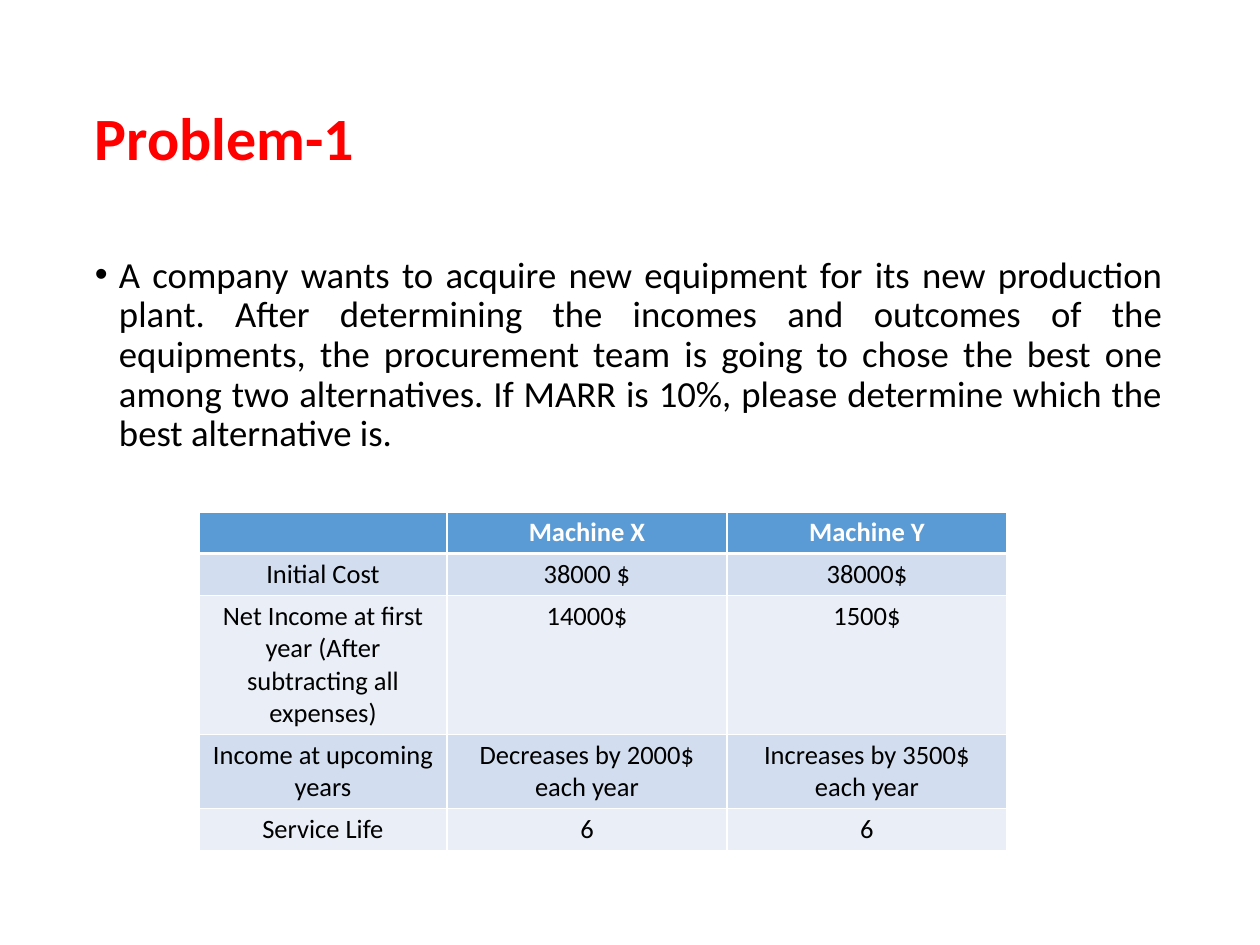
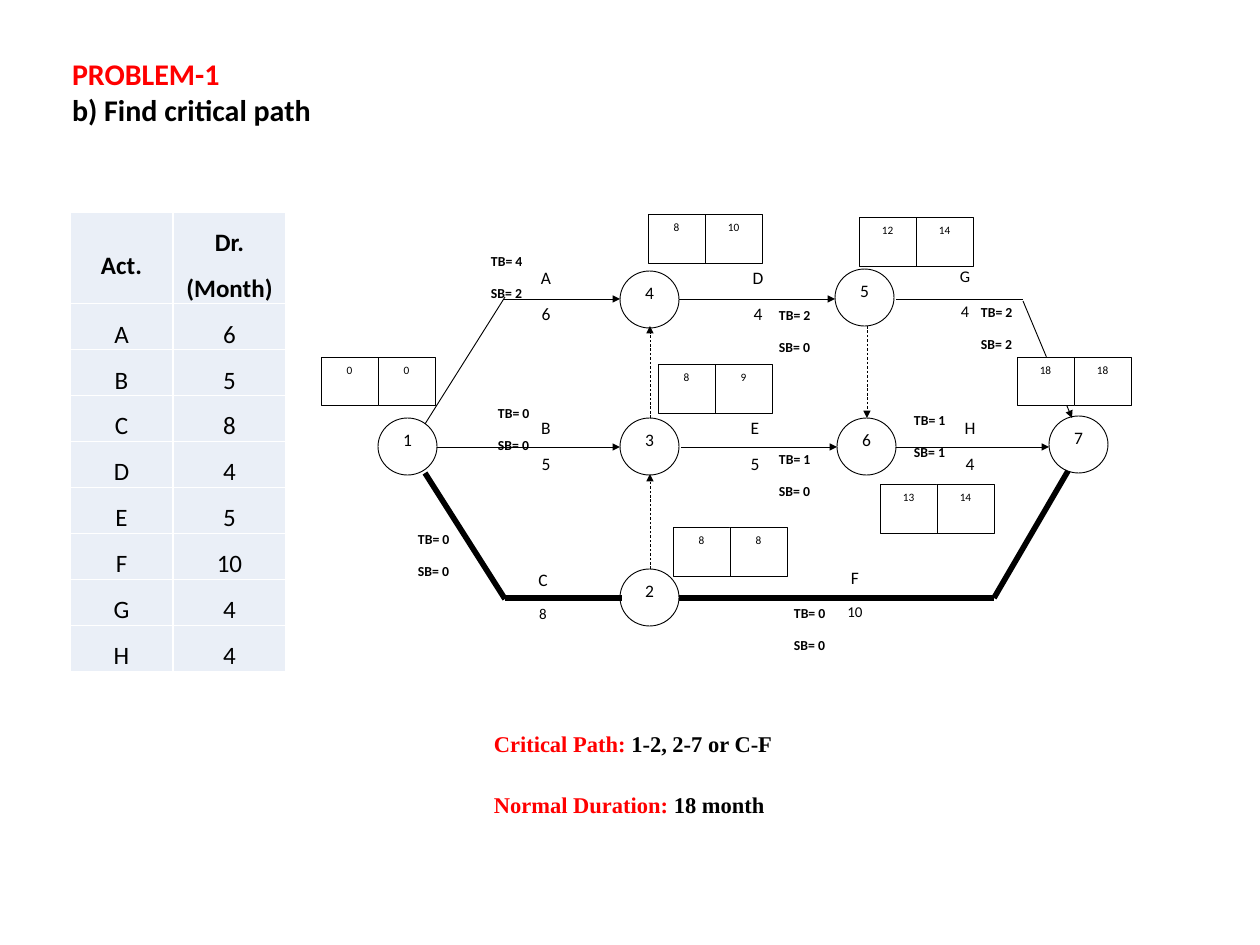
from dataclasses import dataclass

from lxml import etree
from pptx import Presentation
from pptx.dml.color import RGBColor
from pptx.enum.dml import MSO_LINE
from pptx.enum.shapes import MSO_CONNECTOR, MSO_SHAPE
from pptx.enum.text import MSO_ANCHOR, MSO_AUTO_SIZE, PP_ALIGN
from pptx.oxml.ns import qn
from pptx.util import Pt

LEFT, CENTER, JUSTIFY = PP_ALIGN.LEFT, PP_ALIGN.CENTER, PP_ALIGN.JUSTIFY
TOP, MIDDLE = MSO_ANCHOR.TOP, MSO_ANCHOR.MIDDLE
NO_AUTOFIT = MSO_AUTO_SIZE.NONE
RECT, OVAL = MSO_SHAPE.RECTANGLE, MSO_SHAPE.OVAL
STRAIGHT, DASH = MSO_CONNECTOR.STRAIGHT, MSO_LINE.DASH
EMU_PER_PX = 10160


@dataclass(frozen=True)
class Theme:
    font: str = "Calibri"
    serif: str = "Times New Roman"
    red: RGBColor = RGBColor(0xFF, 0, 0)
    black: RGBColor = RGBColor(0, 0, 0)
    white: RGBColor = RGBColor(0xFF, 0xFF, 0xFF)
    header: RGBColor = RGBColor(0x5B, 0x9B, 0xD5)
    band_dark: RGBColor = RGBColor(0xD2, 0xDE, 0xEF)
    band_light: RGBColor = RGBColor(0xEA, 0xEF, 0xF7)
    title: float = 48
    subtitle: float = 24
    body: float = 29.4
    cost_cell: float = 21.2
    activity_cell: float = 20
    result: float = 18
    node: float = 14
    duration_small: float = 12
    slack: float = 11
    event_time: float = 9


T = Theme()

COSTS = [
    ["", "Machine X", "Machine Y"],
    ["Initial Cost", "38000 $", "38000$"],
    ["Net Income at first year (After subtracting all expenses)", "14000$", "1500$"],
    ["Income at upcoming years", "Decreases by 2000$ each year",
     "Increases by 3500$ each year"],
    ["Service Life", "6", "6"],
]
ACTIVITIES = [["Act.", "Dr. (Month)"], ["A", "6"], ["B", "5"], ["C", "8"], ["D", "4"],
              ["E", "5"], ["F", "10"], ["G", "4"], ["H", "4"]]

# Network parts, in px from the network's top left corner
NODES = {"1": (57, 204), "2": (299, 355), "3": (299, 204), "4": (299, 57),
         "5": (514, 55), "6": (516, 204), "7": (728, 202)}
PLAIN_LINES = [(104, 210, 184, 83), (575, 85, 702, 85)]
ARROWS = [(182, 85, 299, 85), (116, 233, 299, 233), (358, 85, 514, 85),
          (360, 233, 516, 233), (575, 233, 728, 233), (702, 87, 751, 204)]
DUMMIES = [(329, 355, 329, 260), (329, 204, 329, 112), (546, 112, 546, 204)]
CRITICAL_LINES = [(104, 259, 184, 385), (184, 384, 301, 384),
                  (358, 384, 673, 384), (673, 384, 747, 257)]
ACTIVITY_LABELS = [  # name, duration, x, y, name size, duration size
    ("A", "6", 182, 45, T.node, T.node),
    ("B", "5", 182, 195, T.node, T.node),
    ("C", "8", 179, 347, T.node, T.duration_small),
    ("D", "4", 394, 45, T.node, T.node),
    ("E", "5", 391, 195, T.node, T.node),
    ("F", "10", 491, 345, T.node, T.duration_small),
    ("G", "4", 601, 45, 13, 13),
    ("H", "4", 606, 195, T.node, T.node),
]
EVENT_TIMES = [("0", "0", 0, 143), ("8", "8", 352, 313), ("13", "14", 559, 270),
               ("8", "9", 337, 150), ("8", "10", 327, 0), ("12", "14", 538, 3),
               ("18", "18", 696, 143)]
SLACKS = [  # total, free, x, y
    (0, 0, 70, 312), (0, 0, 446, 386), (4, 2, 143, 34), (0, 0, 150, 186),
    (2, 0, 431, 88), (2, 2, 633, 85), (1, 0, 431, 232), (1, 1, 566, 193),
]


def px(n):
    return n * EMU_PER_PX


def emu(*lengths):
    return [px(n) for n in lengths]


def format_paragraph(p, size, color=T.black, bold=False, align=LEFT, spacing=1.0,
                     before=0, after=0, font=T.font):
    p.alignment, p.line_spacing = align, spacing
    p.space_before, p.space_after = Pt(before), Pt(after)
    for r in p.runs:
        r.font.name, r.font.size, r.font.bold = font, Pt(size), bold
        r.font.color.rgb = color


def place(sp, box, anchor):
    sp.left, sp.top, sp.width, sp.height = emu(*box)
    tf = sp.text_frame
    tf.word_wrap, tf.auto_size, tf.vertical_anchor = True, NO_AUTOFIT, anchor
    return tf


def add_text(s, box, text, anchor=TOP):
    tf = place(s.shapes.add_textbox(*emu(*box)), box, anchor)
    tf.text = text
    return tf


def add_title(s, box, text, size, anchor, spacing=1.0):
    """Bold title: first line red, any further line black."""
    tf = place(s.shapes.title, box, anchor)
    tf.text = text
    for i, p in enumerate(tf.paragraphs):
        format_paragraph(p, size, T.black if i else T.red, True, spacing=spacing)


def add_problem_text(s, box, text):
    tf = place(s.placeholders[1], box, TOP)
    tf.text = text
    p = tf.paragraphs[0]
    pPr = p._p.get_or_add_pPr()
    pPr.set("marL", str(px(24)))
    pPr.set("indent", str(px(-24)))
    format_paragraph(p, T.body, align=JUSTIFY, spacing=0.9)


# Tables
def set_borders(cell, top, bottom):
    tcPr = cell._tc.get_or_add_tcPr()
    for side, width in (("L", 1), ("R", 1), ("T", top), ("B", bottom)):
        ln = etree.SubElement(tcPr, qn(f"a:ln{side}"), w=str(Pt(width)))
        fill = etree.SubElement(ln, qn("a:solidFill"))
        etree.SubElement(fill, qn("a:srgbClr"), val=str(T.white))


def add_grid(s, x, y, rows, widths, heights, size, banded, spacing=1.0):
    shape = s.shapes.add_table(len(rows), len(widths),
                               *emu(x, y, sum(widths), sum(heights)))
    table = shape.table
    table.first_row, table.horz_banding = banded, banded
    for column, width in zip(table.columns, widths):
        column.width = px(width)
    for i, (values, height) in enumerate(zip(rows, heights)):
        table.rows[i].height = px(height)
        for j, value in enumerate(values):
            cell = table.cell(i, j)
            set_borders(cell, 3 if banded and i == 1 else 1, 3 if banded and i == 0 else 1)
            fill = T.band_light
            if banded and i % 2 == 0:
                fill = T.band_light if i else T.header
            elif banded:
                fill = T.band_dark
            cell.fill.solid()
            cell.fill.fore_color.rgb = fill
            cell.text = value
            color = T.white if banded and i == 0 else T.black
            format_paragraph(cell.text_frame.paragraphs[0], size, color, i == 0,
                             CENTER, spacing)
    return table


def add_cost_table(s, x, y):
    add_grid(s, x, y, COSTS, [248, 280, 280], [41, 41, 138, 73, 42], T.cost_cell, True)


def add_activity_table(s, x, y):
    heights = [90] + [45] * (len(ACTIVITIES) - 1)
    table = add_grid(s, x, y, ACTIVITIES, [103, 113], heights, T.activity_cell, False, 1.5)
    for cell in table.iter_cells():
        cell.vertical_anchor = MIDDLE
        cell.margin_left = cell.margin_right = px(12)
        cell.margin_top = cell.margin_bottom = 0


# Network diagram
def add_outlined(s, kind, box, text, size):
    sp = s.shapes.add_shape(kind, *emu(*box))
    sp.shadow.inherit = False
    sp.fill.solid()
    sp.fill.fore_color.rgb = T.white
    sp.line.color.rgb, sp.line.width = T.black, Pt(0.75)
    tf = place(sp, box, TOP)
    tf.text = text
    format_paragraph(tf.paragraphs[0], size, align=CENTER, spacing=1.15)
    return tf


def add_line(s, x, y, ends, width, arrow=False, dash=None):
    x1, y1, x2, y2 = ends
    cxn = s.shapes.add_connector(STRAIGHT, *emu(x + x1, y + y1, x + x2, y + y2))
    cxn.line.color.rgb, cxn.line.width = T.black, Pt(width)
    if dash:
        cxn.line.dash_style = dash
    if arrow:
        etree.SubElement(cxn.line._get_or_add_ln(), qn("a:tailEnd"), type="triangle")
    etree.SubElement(cxn._element.spPr, qn("a:effectLst"))


def add_activity_label(s, x, y, name, duration, name_size, duration_size):
    tf = add_text(s, (x, y, 86, 113), f"{name}\n{duration}")
    for p, size, after in zip(tf.paragraphs, (name_size, duration_size), (10, 0)):
        format_paragraph(p, size, align=CENTER, spacing=1.15, after=after)


def add_slack_label(s, x, y, total, free):
    tf = add_text(s, (x, y, 71, 59), f"TB= {total}\nSB= {free}")
    tf.word_wrap, tf.margin_left = False, px(27)
    for p, before in zip(tf.paragraphs, (0, 13)):
        format_paragraph(p, T.slack, bold=True, before=before)


def add_network(s, x, y):
    for number, (dx, dy) in NODES.items():
        tf = add_outlined(s, OVAL, (x + dx, y + dy, 59, 57), number, T.node)
        tf.margin_left = tf.margin_right = tf.margin_top = tf.margin_bottom = 0
    for lines, width, arrow, dash in ((PLAIN_LINES, 0.75, False, None),
                                      (ARROWS, 0.75, True, None),
                                      (DUMMIES, 0.5, True, DASH),
                                      (CRITICAL_LINES, 4.5, False, None)):
        for ends in lines:
            add_line(s, x, y, ends, width, arrow, dash)
    for name, duration, dx, dy, name_size, duration_size in ACTIVITY_LABELS:
        add_activity_label(s, x + dx, y + dy, name, duration, name_size, duration_size)
    for early, late, dx, dy in EVENT_TIMES:
        for i, time in enumerate((early, late)):
            add_outlined(s, RECT, (x + dx + 57 * i, y + dy, 57, 49), time, T.event_time)
    for total, free, dx, dy in SLACKS:
        add_slack_label(s, x + dx, y + dy, total, free)


def add_result(s, x, y, label, value):
    tf = add_text(s, (x, y, 735, 36), f"{label}: ", MIDDLE)
    p = tf.paragraphs[0]
    p.add_run().text = value
    format_paragraph(p, T.result, bold=True, font=T.serif)
    p.runs[0].font.color.rgb = T.red


# Slides
def build_alternatives_slide(prs):
    s = prs.slides.add_slide(prs.slide_layouts[1])
    add_title(s, (86, 50, 1086, 183), "Problem-1", T.title, MIDDLE, 0.9)
    add_problem_text(s, (86, 252, 1086, 599), (
        "A company wants to acquire new equipment for its new production plant. "
        "After determining the incomes and outcomes of the equipments, the procurement "
        "team is going to chose the best one among two alternatives. If MARR is 10%, "
        "please determine which the best alternative is."))
    add_cost_table(s, 199, 512)


def build_critical_path_slide(prs):
    s = prs.slides.add_slide(prs.slide_layouts[5])
    add_title(s, (63, 51, 1161, 118), "PROBLEM-1\nb) Find critical path", T.subtitle, TOP)
    add_network(s, 321, 214)
    add_activity_table(s, 70, 212)
    add_result(s, 485, 726, "Critical Path", "1-2, 2-7 or C-F")
    add_result(s, 485, 787, "Normal Duration", "18 month")


def main():
    prs = Presentation()
    prs.slide_width, prs.slide_height = emu(1260, 945)
    build_alternatives_slide(prs)
    build_critical_path_slide(prs)
    prs.save("out.pptx")


if __name__ == "__main__":
    main()
